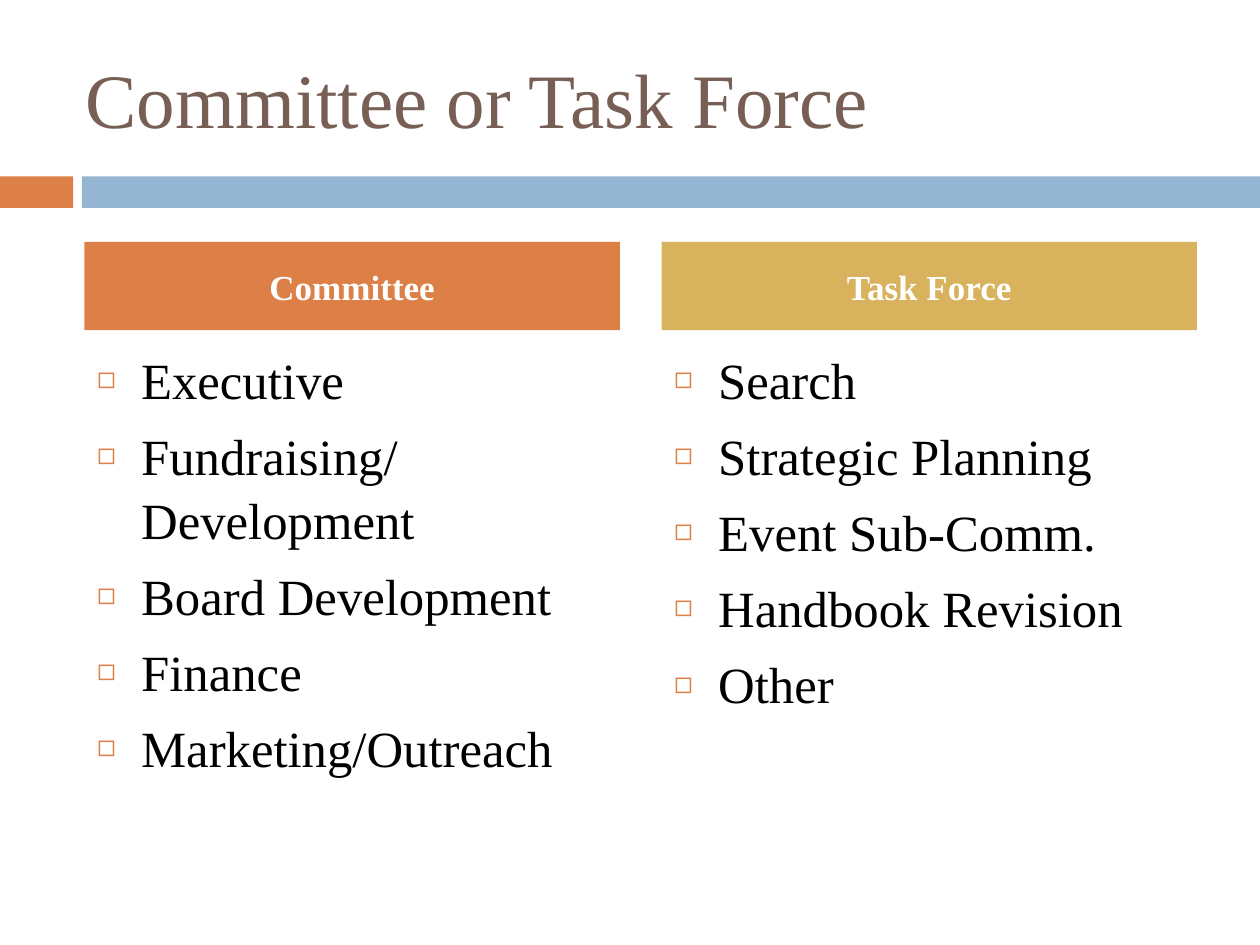
from lxml.etree import SubElement
from pptx import Presentation
from pptx.dml.color import RGBColor
from pptx.enum.shapes import MSO_SHAPE
from pptx.enum.text import MSO_ANCHOR, MSO_AUTO_SIZE, PP_ALIGN
from pptx.oxml.ns import qn
from pptx.util import Inches, Pt

FACE = "Times New Roman"
ORANGE, BLUE, GOLD = "DD8047", "94B6D2", "D8B25C"
BROWN, BLACK, WHITE = "775F55", "000000", "FFFFFF"

LISTS = [
    ("Committee", ORANGE, ["Executive", "Fundraising/Development",
                           "Board Development", "Finance",
                           "Marketing/Outreach"]),
    ("Task Force", GOLD, ["Search", "Strategic Planning", "Event Sub-Comm.",
                          "Handbook Revision", "Other"]),
]


def color(code):
    return RGBColor.from_string(code)


def paint(shape, code):
    shape.fill.solid()
    shape.fill.fore_color.rgb = color(code)
    shape.line.fill.background()


def assign(item, values):
    for name, value in values.items():
        setattr(item, name, value)


def place(shape, box):
    names = ("left", "top", "width", "height")
    assign(shape, dict(zip(names, map(Inches, box))))


def write(para, text, size, code, bold=False):
    run = para.add_run()
    run.text = text
    assign(run.font, {"name": FACE, "size": Pt(size), "bold": bold})
    run.font.color.rgb = color(code)


def mark(para):
    """Give a paragraph a hanging square bullet."""
    props = para._p.get_or_add_pPr()
    props.set("marL", str(Inches(0.35)))
    props.set("indent", str(-Inches(0.35)))
    tint = SubElement(props, qn("a:buClr"))
    SubElement(tint, qn("a:srgbClr"), val=ORANGE)
    SubElement(props, qn("a:buSzPct"), val="60000")
    SubElement(props, qn("a:buChar"), char="◻")


def add_line(holder, box, text, size, code, align, bold=False):
    """Fill a placeholder with one line, centred in height."""
    place(holder, box)
    frame = holder.text_frame
    assign(frame, {"vertical_anchor": MSO_ANCHOR.MIDDLE, "word_wrap": True,
                   "auto_size": MSO_AUTO_SIZE.NONE})
    para = frame.paragraphs[0]
    para.alignment = align
    write(para, text, size, code, bold)


def add_list(holder, box, items):
    place(holder, box)
    frame = holder.text_frame
    assign(frame, {"vertical_anchor": MSO_ANCHOR.TOP, "word_wrap": True,
                   "auto_size": MSO_AUTO_SIZE.NONE,
                   "margin_top": Inches(0.07)})
    for i, text in enumerate(items):
        para = frame.add_paragraph() if i else frame.paragraphs[0]
        mark(para)
        assign(para, {"line_spacing": 1.05, "space_before": Pt(7 if i else 0)})
        write(para, text, 29, BLACK)


def add_column(head, body, box, title, code, items):
    left, top, width, height = box
    bar, gap = 0.7, 0.05
    add_line(head, (left, top, width, bar), title, 20, WHITE,
             PP_ALIGN.CENTER, True)
    paint(head, code)
    drop = bar + gap
    add_list(body, (left, top + drop, width, height - drop), items)


def add_band(slide, box):
    left, top, width, height = box
    tab, gap = 0.58, 0.07
    start = tab + gap
    for x, span, code in ((left, tab, ORANGE),
                          (left + start, width - start, BLUE)):
        bar = slide.shapes.add_shape(MSO_SHAPE.RECTANGLE, 0, 0, 0, 0)
        place(bar, (x, top, span, height))
        bar.shadow.inherit = False
        paint(bar, code)


def main():
    deck = Presentation()
    assign(deck, {"slide_width": Inches(10), "slide_height": Inches(7.5)})
    slide = deck.slides.add_slide(deck.slide_layouts.get_by_name("Comparison"))
    add_band(slide, (0, 1.4, 10, 0.25))
    add_line(slide.shapes.title, (0.58, 0.3, 8.92, 0.95),
             "Committee or Task Force", 44, BROWN, PP_ALIGN.LEFT)
    parts = list(slide.placeholders)[1:]
    wide, step = 4.25, 4.58
    for i, (title, code, items) in enumerate(LISTS):
        head, body = parts[2 * i:2 * i + 2]
        add_column(head, body, (0.67 + i * step, 1.92, wide, 4.67),
                   title, code, items)
    deck.save("out.pptx")


if __name__ == "__main__":
    main()
